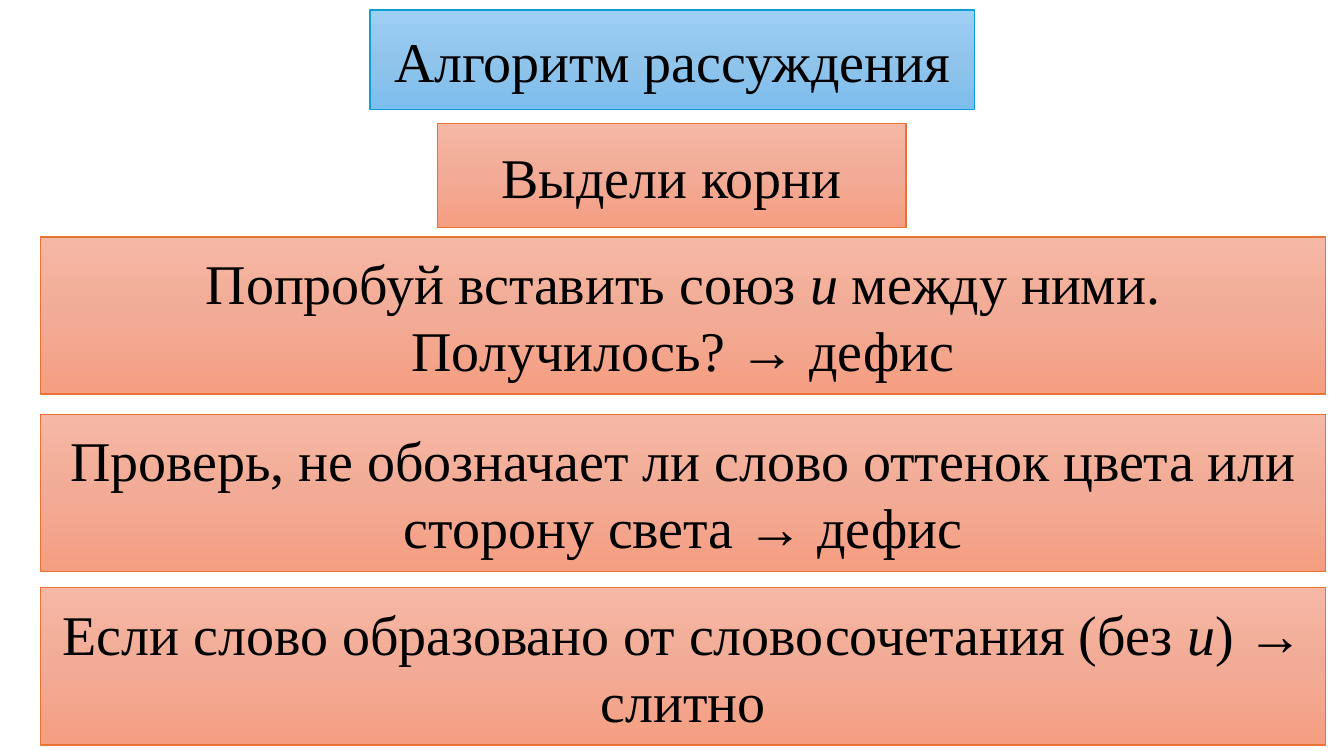
from copy import deepcopy
from dataclasses import dataclass

from pptx import Presentation
from pptx import util as u
from pptx.dml.color import RGBColor
from pptx.enum import shapes, text
from pptx.slide import Slide

BLUE = ("9ECFF5", "90C4EB", "7CBEED")
CORAL = ("F5B8A5", "F2AB96", "F59E82")
FONT = {"name": "Times New Roman", "size": u.Pt(40), "bold": False}
FRAME = {
    "word_wrap": True,
    "auto_size": text.MSO_AUTO_SIZE.NONE,
    "vertical_anchor": text.MSO_ANCHOR.MIDDLE,
}


@dataclass
class Step:
    words: str
    left: float
    top: float
    width: float
    height: float
    tones: tuple[str, str, str] = CORAL
    edge: str = "E97132"
    title: bool = False


def wide(words: str, top: float) -> Step:
    return Step(words, 1.02, top, 32.39, 3.96)


STEPS = [
    Step("Алгоритм рассуждения", 9.32, 0.25, 15.24, 2.51, BLUE, "0F9ED5", True),
    Step("Выдели корни", 11.02, 3.12, 11.81, 2.62),
    wide("Попробуй вставить союз *и* между ними. Получилось? → дефис", 5.97),
    wide("Проверь, не обозначает ли слово оттенок цвета или сторону света → дефис", 10.44),
    wide("Если слово образовано от словосочетания (без *и*) → слитно", 14.81),
]


def paint(color, tone: str) -> None:
    color.rgb = RGBColor.from_string(tone)


def style(item, values: dict) -> None:
    for key, value in values.items():
        setattr(item, key, value)


def shade(fill, box, tones: tuple[str, str, str]) -> None:
    fill.gradient()
    fill.gradient_angle = 270
    first = box.element.spPr.xpath("./a:gradFill/a:gsLst/a:gs")[0]
    first.addnext(deepcopy(first))
    for stop, spot, tone in zip(fill.gradient_stops, (0, 0.5, 1), tones):
        stop.position = spot
        paint(stop.color, tone)


def write(frame, words: str) -> None:
    style(frame, FRAME)
    para = frame.paragraphs[0]
    para.alignment = text.PP_ALIGN.CENTER
    for place, part in enumerate(words.split("*")):
        run = para.add_run()
        run.text = part
        style(run.font, FONT | {"italic": place % 2 == 1})
        paint(run.font.color, "000000")


def draw(slide: Slide, step: Step) -> None:
    area = [u.Cm(n) for n in (step.left, step.top, step.width, step.height)]
    if step.title:
        box = slide.shapes.title
        style(box, dict(zip(("left", "top", "width", "height"), area)))
    else:
        box = slide.shapes.add_shape(shapes.MSO_SHAPE.RECTANGLE, *area)
        box.shadow.inherit = False
    shade(box.fill, box, step.tones)
    paint(box.line.color, step.edge)
    box.line.width = u.Pt(1)
    write(box.text_frame, step.words)


def main() -> None:
    deck = Presentation()
    style(deck, {"slide_width": u.Cm(33.87), "slide_height": u.Cm(19.05)})
    slide = deck.slides.add_slide(deck.slide_layouts[5])
    for step in STEPS:
        draw(slide, step)
    deck.save("out.pptx")


if __name__ == "__main__":
    main()
